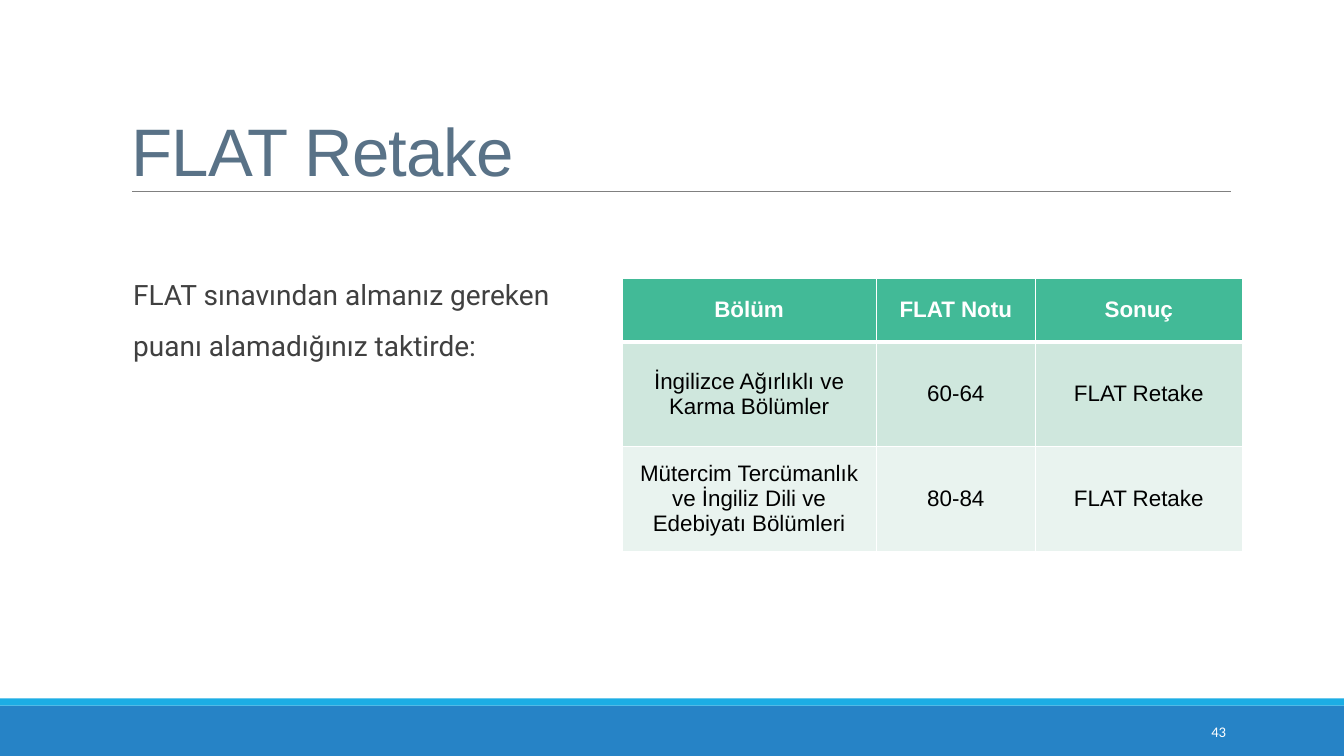
"""Build the FLAT Retake slide."""
from dataclasses import dataclass

from lxml.etree import SubElement
from pptx import Presentation
from pptx.dml.color import RGBColor
from pptx.enum.shapes import MSO_CONNECTOR, MSO_SHAPE
from pptx.enum.text import MSO_ANCHOR, MSO_AUTO_SIZE, PP_ALIGN
from pptx.oxml.ns import qn
from pptx.util import Pt

SCALE = 9144


@dataclass(frozen=True)
class Theme:
    """Hold the colours, fonts and type sizes."""
    white: str = "FFFFFF"
    black: str = "000000"
    slate: str = "597287"
    ink: str = "404040"
    rule: str = "808080"
    band: str = "2683C6"
    strip: str = "1CADE4"
    head: str = "42BA97"
    rows: tuple = ("CFE7DD", "E9F3EF")
    main: str = "Arial"
    text: str = "Roboto"
    foot: str = "Calibri"
    title: float = 48
    body: float = 20
    cell: float = 16
    page: float = 10.5


THEME = Theme()


def px(*sizes):
    """Turn px lengths into EMU."""
    return [size * SCALE for size in sizes]


def rgb(code):
    """Turn a hex code into a colour."""
    return RGBColor.from_string(code)


def write(para, text, face, size, color, bold=False):
    """Add one formatted run to a paragraph."""
    run = para.add_run()
    run.text = text
    font = run.font
    font.name, font.size, font.bold = face, Pt(size), bold
    font.color.rgb = rgb(color)
    return run


def place(shape, box):
    """Move a shape into its box."""
    shape.left, shape.top, shape.width, shape.height = px(*box)


def setup(frame, anchor, pad):
    """Set wrapping, anchor and side margins of a text frame."""
    frame.word_wrap = True
    frame.auto_size = MSO_AUTO_SIZE.NONE
    frame.vertical_anchor = anchor
    frame.margin_left, frame.margin_right = px(pad, pad)
    frame.margin_top, frame.margin_bottom = px(5, 5)
    return frame.paragraphs[0]


def draw_bar(slide, box, color):
    """Draw one plain filled bar."""
    bar = slide.shapes.add_shape(MSO_SHAPE.RECTANGLE, *px(*box))
    bar.shadow.inherit = False
    bar.fill.solid()
    bar.fill.fore_color.rgb = rgb(color)
    bar.line.fill.background()


def draw_foot(slide, box, page):
    """Draw the footer band, its top strip and the page number."""
    left, top, width, height = box
    strip = 7
    draw_bar(slide, (left, top + strip, width, height - strip), THEME.band)
    draw_bar(slide, (left, top, width, strip), THEME.strip)
    note = slide.shapes.add_textbox(*px(left + 1083, top + 13, 143, 40))
    para = setup(note.text_frame, MSO_ANCHOR.MIDDLE, 10)
    para.alignment = PP_ALIGN.RIGHT
    write(para, page, THEME.foot, THEME.page, THEME.white)


def draw_title(slide, box, text):
    """Fill the title placeholder and draw the rule near its foot."""
    left, top, width, height = box
    title = slide.shapes.title
    place(title, box)
    para = setup(title.text_frame, MSO_ANCHOR.BOTTOM, 10)
    para.alignment = PP_ALIGN.LEFT
    para.line_spacing = 0.85
    run = write(para, text, THEME.main, THEME.title, THEME.slate)
    run.font._element.set("spc", "-50")
    y = top + height - 4
    ends = px(left + 11, y, left + width + 1, y)
    rule = slide.shapes.add_connector(MSO_CONNECTOR.STRAIGHT, *ends)
    rule.line.color.rgb = rgb(THEME.rule)
    rule.line.width = Pt(0.5)
    SubElement(rule._element.spPr, qn("a:effectLst"))


def draw_body(slide, box, text):
    """Fill the body placeholder with one unbulleted paragraph."""
    body = slide.placeholders[1]
    place(body, box)
    para = setup(body.text_frame, MSO_ANCHOR.TOP, 0)
    props = para._p.get_or_add_pPr()
    props.set("marL", "0")
    props.set("indent", "0")
    SubElement(props, qn("a:buNone"))
    para.line_spacing = 1.5
    para.space_before, para.space_after = Pt(0), Pt(2)
    write(para, text, THEME.text, THEME.body, THEME.ink)


def edge(cell, side, points):
    """Add a white border to one side of a cell."""
    line = SubElement(cell._tc.get_or_add_tcPr(), qn(f"a:ln{side}"))
    line.set("w", str(Pt(points)))
    fill = SubElement(line, qn("a:solidFill"))
    SubElement(fill, qn("a:srgbClr")).set("val", THEME.white)


def draw_cell(cell, row, text):
    """Format and fill one cell by its row."""
    head = row == 0
    for side in "LRTB":
        thick = (side, row) in (("B", 0), ("T", 1))
        edge(cell, side, 3 if thick else 1)
    cell.fill.solid()
    cell.fill.fore_color.rgb = rgb(THEME.head if head else THEME.rows[row - 1])
    cell.vertical_anchor = MSO_ANCHOR.MIDDLE
    para = cell.text_frame.paragraphs[0]
    para.alignment = PP_ALIGN.CENTER
    color = THEME.white if head else THEME.black
    write(para, text, THEME.main, THEME.cell, color, head)


def draw_table(slide, box, cols, rows, data):
    """Draw the table of departments, scores and results."""
    table = slide.shapes.add_table(len(rows), len(cols), *px(*box)).table
    for col, width in zip(table.columns, px(*cols)):
        col.width = width
    for row, height in zip(table.rows, px(*rows)):
        row.height = height
    for i, texts in enumerate(data):
        for j, text in enumerate(texts):
            draw_cell(table.cell(i, j), i, text)


def main():
    """Build and save the slide."""
    deck = Presentation()
    deck.slide_width, deck.slide_height = px(1333, 750)
    slide = deck.slides.add_slide(deck.slide_layouts[1])
    draw_foot(slide, (0, 693, 1333, 57), "43")
    draw_title(slide, (120, 35, 1100, 159), "FLAT Retake")
    draw_body(slide, (132, 254, 435, 87),
              "FLAT sınavından almanız gereken puanı alamadığınız taktirde:")
    data = (
        ("Bölüm", "FLAT Notu", "Sonuç"),
        ("İngilizce Ağırlıklı ve Karma Bölümler", "60-64", "FLAT Retake"),
        ("Mütercim Tercümanlık ve İngiliz Dili ve Edebiyatı Bölümleri",
         "80-84", "FLAT Retake"),
    )
    draw_table(slide, (617, 276, 615, 271), (252, 158, 205),
               (63, 104, 104), data)
    deck.save("out.pptx")


if __name__ == "__main__":
    main()
